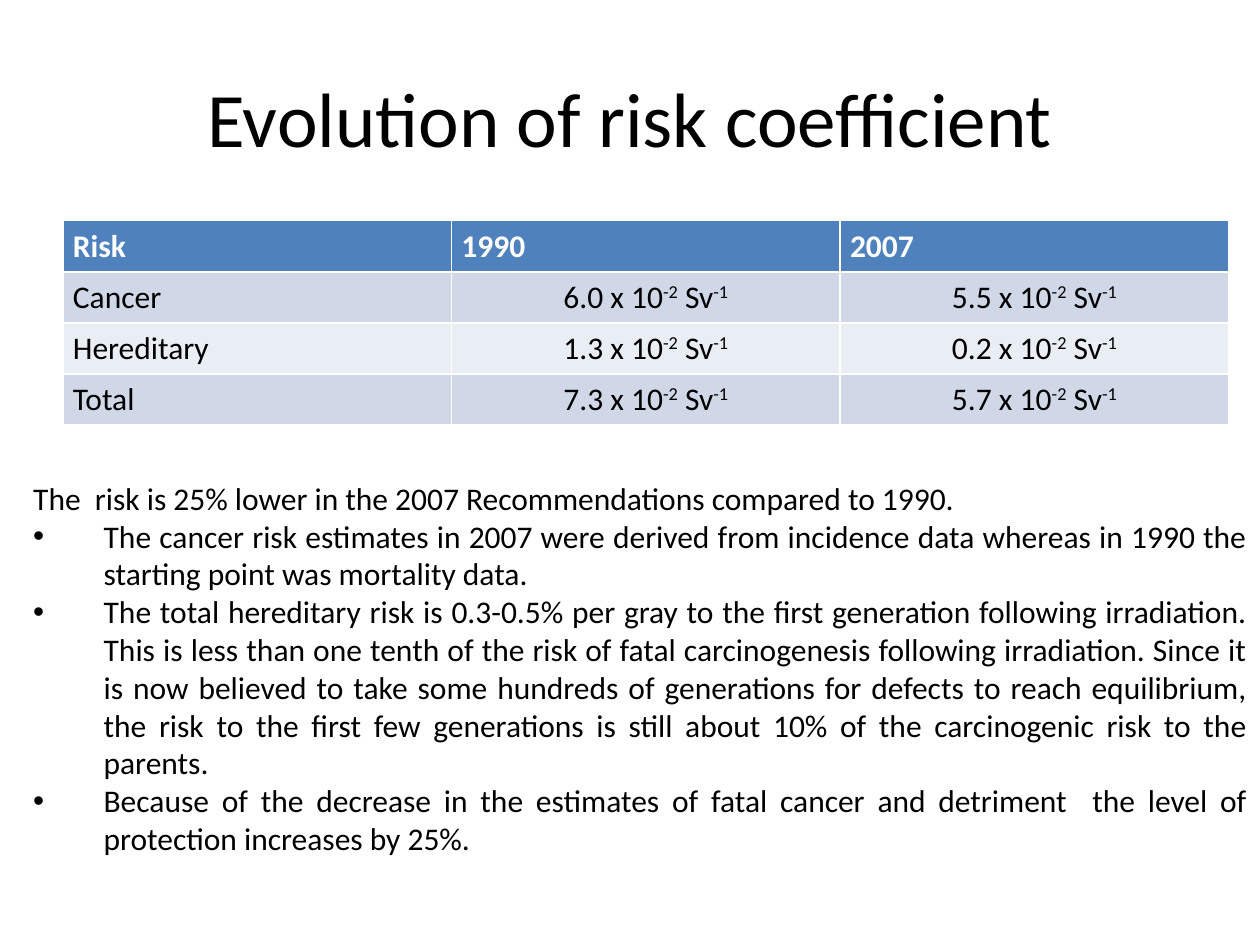
from lxml.etree import SubElement
from pptx import Presentation
from pptx.dml.color import RGBColor
from pptx.enum.text import MSO_ANCHOR as Anchor, PP_ALIGN as Align
from pptx.oxml.ns import qn
from pptx.util import Cm, Pt

COLORS = {"text": "000000", "header": "4F81BD", "header_text": "FFFFFF",
          "band_dark": "D0D8E8", "band_light": "E9EDF4"}
TITLE_FORMAT = {"name": "Calibri", "size": Pt(44), "bold": False}
BODY_FORMAT = {"name": "Calibri", "size": Pt(18), "bold": False}
HEADER_FORMAT = {**BODY_FORMAT, "bold": True}

HEADERS = ["Risk", "1990", "2007"]
RISKS = [("Cancer", "6.0", "5.5"), ("Hereditary", "1.3", "0.2"), ("Total", "7.3", "5.7")]
SUMMARY = "The  risk is 25% lower in the 2007 Recommendations compared to 1990."
REASONS = [
    "The cancer risk estimates in 2007 were derived from incidence data whereas in 1990 "
    "the starting point was mortality data. ",
    "The total hereditary risk is 0.3-0.5% per gray to the first generation following "
    "irradiation. This is less than one tenth of the risk of fatal carcinogenesis following "
    "irradiation. Since it is now believed to take some hundreds of generations for defects "
    "to reach equilibrium, the risk to the first few generations is still about 10% of the "
    "carcinogenic risk to the parents.",
    "Because of the decrease in the estimates of fatal cancer and detriment  the level of "
    "protection increases by 25%.",
]


def add_run(paragraph, text, formats, color="text", superscript=False):
    """Append a formatted run to a paragraph."""
    run = paragraph.add_run()
    run.text = text
    for name, value in formats.items():
        setattr(run.font, name, value)
    run.font.color.rgb = RGBColor.from_string(COLORS[color])
    if superscript:
        run._r.get_or_add_rPr().set("baseline", "30000")


def add_text_frame(slide, box, anchor):
    """Add a wrapping text box and return its text frame."""
    frame = slide.shapes.add_textbox(*box).text_frame
    frame.word_wrap = True
    frame.vertical_anchor = anchor
    return frame


def add_title(slide, box, text):
    """Place the centred slide title."""
    paragraph = add_text_frame(slide, box, Anchor.MIDDLE).paragraphs[0]
    paragraph.alignment = Align.CENTER
    add_run(paragraph, text, TITLE_FORMAT)


def add_coefficient(paragraph, value):
    """Write a risk coefficient with raised exponents."""
    paragraph.alignment = Align.CENTER
    for text, raised in ((f"{value} x 10", False), ("-2", True), (" Sv", False), ("-1", True)):
        add_run(paragraph, text, BODY_FORMAT, superscript=raised)


def add_risk_table(slide, box):
    """Place the table of risk coefficients by year."""
    table = slide.shapes.add_table(len(RISKS) + 1, len(HEADERS), *box).table
    for row_index, values in enumerate([HEADERS, *RISKS]):
        band = "band_dark" if row_index % 2 else "band_light"
        for column_index, value in enumerate(values):
            cell = table.cell(row_index, column_index)
            cell.margin_left = cell.margin_right = Cm(0.2)
            cell.fill.solid()
            cell.fill.fore_color.rgb = RGBColor.from_string(COLORS[band if row_index else "header"])
            paragraph = cell.text_frame.paragraphs[0]
            if row_index == 0:
                add_run(paragraph, value, HEADER_FORMAT, "header_text")
            elif column_index == 0:
                add_run(paragraph, value, BODY_FORMAT)
            else:
                add_coefficient(paragraph, value)


def add_bullet(paragraph, indent):
    """Give a paragraph a hanging bullet."""
    properties = paragraph._p.get_or_add_pPr()
    properties.set("marL", str(indent))
    properties.set("indent", str(-indent))
    SubElement(properties, qn("a:buFont"), typeface="Arial")
    SubElement(properties, qn("a:buChar"), char="•")


def add_explanation(slide, box):
    """Place the summary and its bulleted reasons."""
    frame = add_text_frame(slide, box, Anchor.TOP)
    add_run(frame.paragraphs[0], SUMMARY, BODY_FORMAT)
    for reason in REASONS:
        paragraph = frame.add_paragraph()
        paragraph.alignment = Align.JUSTIFY
        add_bullet(paragraph, Cm(1.42))
        add_run(paragraph, reason, BODY_FORMAT)


def main():
    """Build and save the presentation."""
    presentation = Presentation()
    presentation.slide_width, presentation.slide_height = Cm(25.4), Cm(19.05)
    slide = presentation.slides.add_slide(presentation.slide_layouts[6])
    add_title(slide, (Cm(1.27), Cm(0.76), Cm(22.86), Cm(3.18)), "Evolution of risk coefficient")
    add_risk_table(slide, (Cm(1.27), Cm(4.45), Cm(23.5), Cm(4.12)))
    add_explanation(slide, (Cm(0.42), Cm(9.53), Cm(24.98), Cm(7.95)))
    presentation.save("out.pptx")


if __name__ == "__main__":
    main()
